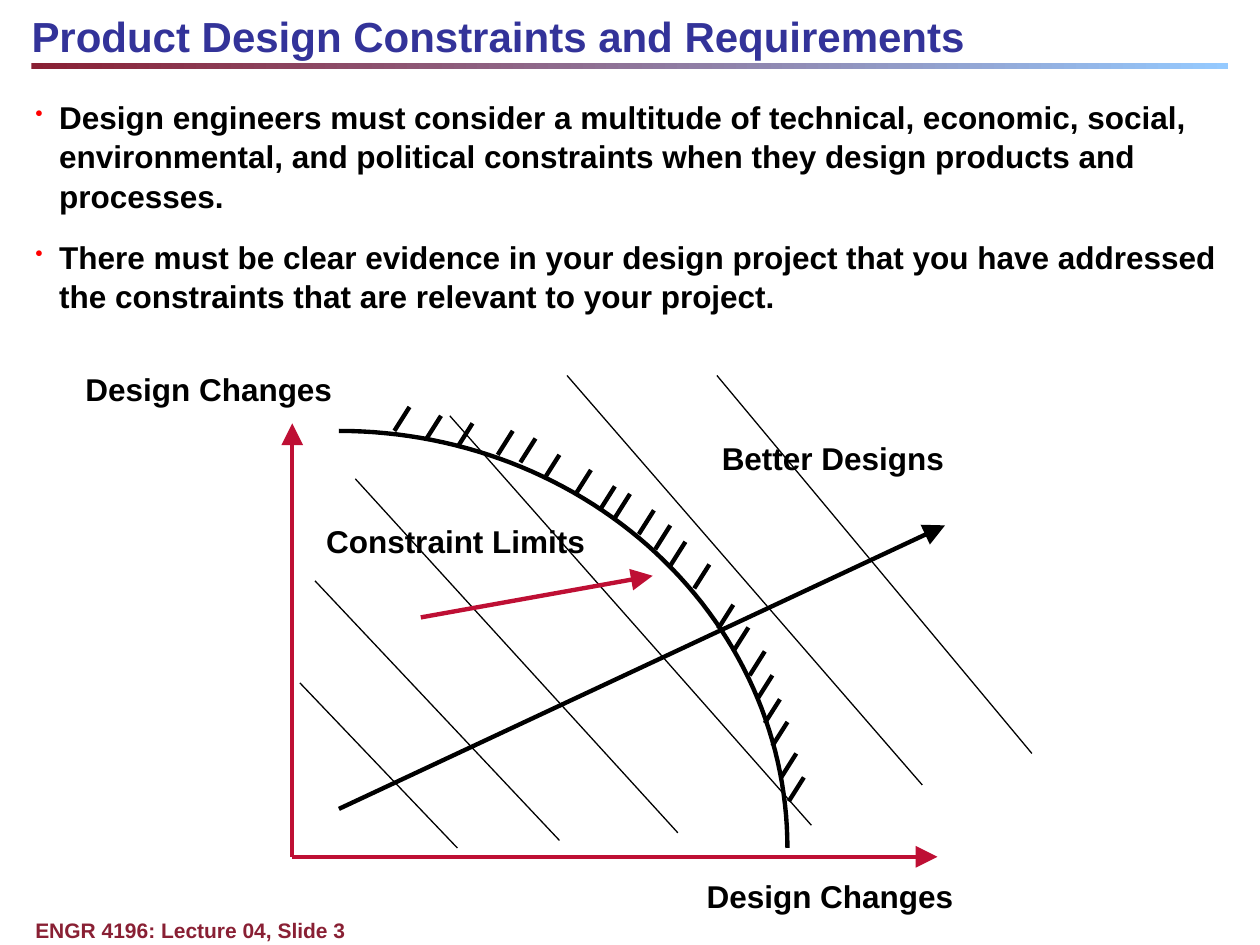
import math
import lxml.etree
import pptx
import pptx.util
import pptx.dml.color
import pptx.enum.shapes
import pptx.enum.text
import pptx.oxml.ns

Inches, Pt = pptx.util.Inches, pptx.util.Pt
RGBColor = pptx.dml.color.RGBColor
qn = pptx.oxml.ns.qn

BLACK = RGBColor(0x00, 0x00, 0x00)
NAVY = RGBColor(0x33, 0x33, 0x99)
WINE = RGBColor(0x89, 0x20, 0x34)
SKY = RGBColor(0x95, 0xCA, 0xFF)
RED = RGBColor(0xBE, 0x0F, 0x34)
FONT = "Arial"

POINTS = [
    "Design engineers must consider a multitude of technical, economic, social, "
    "environmental, and political constraints when they design products and processes.",
    "There must be clear evidence in your design project that you have addressed "
    "the constraints that are relevant to your project.",
]
# Contours: x1, y1, x2, y2
CONTOURS = [
    (2.38, 5.42, 3.63, 6.73), (2.5, 4.61, 4.44, 6.67), (2.82, 3.8, 5.38, 6.61),
    (3.57, 3.3, 6.44, 6.55), (4.5, 2.98, 7.32, 6.23), (5.69, 2.98, 8.19, 5.98),
]
# Upper ends of the hatch marks along the limit curve
HATCHES = [
    (3.25, 3.23), (3.5, 3.3), (3.75, 3.36), (4.07, 3.42), (4.25, 3.48),
    (4.44, 3.61), (4.69, 3.73), (4.88, 3.86), (5, 3.92), (5.19, 4.05),
    (5.32, 4.17), (5.44, 4.3), (5.63, 4.48), (5.82, 4.8), (5.94, 4.98),
    (6.07, 5.17), (6.13, 5.36), (6.19, 5.55), (6.25, 5.73), (6.32, 5.98),
    (6.38, 6.17),
]


def style(para, size, color):
    para.line_spacing = 1.05
    para.font.name = FONT
    para.font.size = Pt(size)
    para.font.bold = True
    para.font.color.rgb = color


def setup(frame, inset=True):
    frame.word_wrap = True
    frame.auto_size = pptx.enum.text.MSO_AUTO_SIZE.NONE
    frame.vertical_anchor = pptx.enum.text.MSO_ANCHOR.TOP
    if not inset:
        frame.margin_left = frame.margin_right = 0
        frame.margin_top = frame.margin_bottom = 0


def label(slide, box, text, size=18, color=BLACK, inset=True):
    shape = slide.shapes.add_textbox(*map(Inches, box))
    setup(shape.text_frame, inset)
    para = shape.text_frame.paragraphs[0]
    para.text = text
    style(para, size, color)


def line(slide, ends, color=BLACK, width=2.5, arrow=False):
    kind = pptx.enum.shapes.MSO_CONNECTOR.STRAIGHT
    link = slide.shapes.add_connector(kind, *map(Inches, ends))
    link.line.color.rgb = color
    link.line.width = Pt(width)
    if arrow:
        lxml.etree.SubElement(link.line._get_or_add_ln(), qn("a:tailEnd"),
                              type="triangle", w="lg", len="lg")
    lxml.etree.SubElement(link._element.spPr, qn("a:effectLst"))


def heading(slide, box):
    title = slide.shapes.title
    title.left, title.top, title.width, title.height = map(Inches, box)
    setup(title.text_frame, inset=False)
    para = title.text_frame.paragraphs[0]
    para.text = "Product Design Constraints and Requirements"
    para.alignment = pptx.enum.text.PP_ALIGN.LEFT
    para.space_before = Pt(0)
    style(para, 24, NAVY)


def rule(slide, box):
    bar = slide.shapes.add_shape(pptx.enum.shapes.MSO_SHAPE.RECTANGLE,
                                 *map(Inches, box))
    bar.shadow.inherit = False
    bar.line.fill.background()
    bar.fill.gradient()
    bar.fill.gradient_angle = 0
    for stop, color, place in zip(bar.fill.gradient_stops, (WINE, SKY), (0, 1)):
        stop.color.rgb = color
        stop.position = place


def bullets(slide, box):
    frame = slide.shapes.add_textbox(*map(Inches, box)).text_frame
    setup(frame, inset=False)
    for i, text in enumerate(POINTS):
        para = frame.add_paragraph() if i else frame.paragraphs[0]
        para.text = text
        props = para._p.get_or_add_pPr()
        props.set("marL", str(Inches(0.19)))
        props.set("indent", str(-Inches(0.19)))
        tint = lxml.etree.SubElement(props, qn("a:buClr"))
        lxml.etree.SubElement(tint, qn("a:srgbClr"), val="FF0000")
        lxml.etree.SubElement(props, qn("a:buSzPct"), val="70000")
        lxml.etree.SubElement(props, qn("a:buChar"), char="•")
        para.space_after = Pt(12)
        style(para, 18, BLACK)


def curve(slide, box, steps=60):
    """Draw the upper right quarter of an ellipse that fills the box."""
    x, y, w, h = box
    turns = [math.pi / 2 * i / steps for i in range(steps + 1)]
    spots = [(Inches(x + w * math.sin(t)), Inches(y + h * (1 - math.cos(t))))
             for t in turns]
    pen = slide.shapes.build_freeform(*spots[0])
    pen.add_line_segments(spots[1:], close=False)
    arc = pen.convert_to_shape()
    arc.shadow.inherit = False
    arc.fill.background()
    arc.line.color.rgb = BLACK
    arc.line.width = Pt(2.5)


def chart(slide, box):
    x, y, w, h = box

    # Axes
    label(slide, (5.51, 6.9, 3.33, 0.4), "Design Changes")
    label(slide, (0.58, 2.87, 2.42, 0.4), "Design Changes")
    line(slide, (x, y + h, x, y), RED, arrow=True)
    line(slide, (x, y + h, x + w, y + h), RED, arrow=True)

    # Contours and direction of better designs
    for ends in CONTOURS:
        line(slide, ends, width=0.75)
    line(slide, (2.69, 6.42, 7.5, 4.17), arrow=True)
    label(slide, (5.63, 3.42, 2.75, 0.4), "Better Designs")

    # Hatched limit curve
    curve(slide, (2.69, 3.42, 3.56, 3.31))
    for left, top in HATCHES:
        line(slide, (left, top, left - 0.12, top + 0.19))
    label(slide, (2.49, 4.08, 2.5, 0.4), "Constraint Limits")
    line(slide, (3.34, 4.9, 5.18, 4.57), RED, arrow=True)


def main():
    deck = pptx.Presentation()
    deck.slide_width, deck.slide_height = Inches(10), Inches(7.5)
    slide = deck.slides.add_slide(deck.slide_layouts[5])
    rule(slide, (0.25, 0.5, 9.5, 0.05))
    label(slide, (0.28, 7.27, 8.92, 0.2), "ENGR 4196: Lecture 04, Slide 3",
          12, WINE, inset=False)
    bullets(slide, (0.28, 0.76, 9.48, 1.68))
    heading(slide, (0.25, 0.06, 9.42, 0.4))
    chart(slide, (2.32, 3.36, 5.12, 3.44))
    deck.save("out.pptx")


if __name__ == "__main__":
    main()
